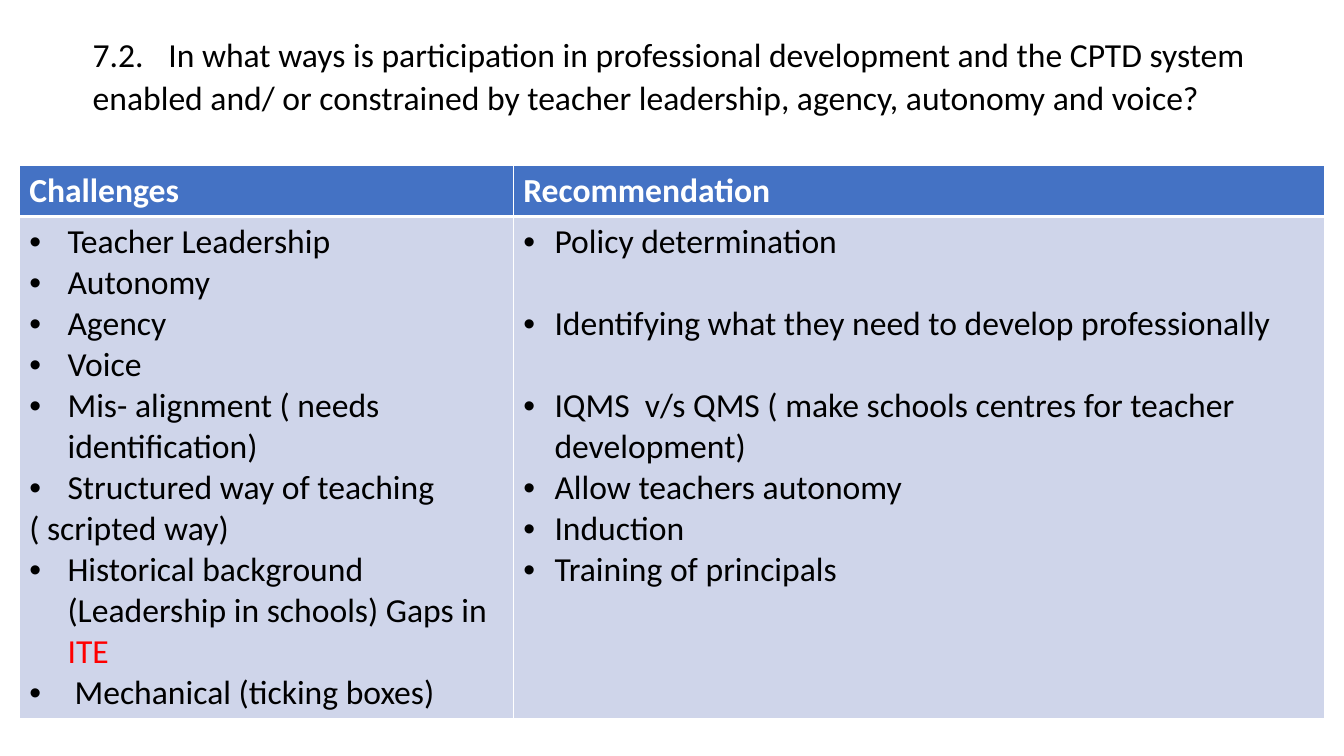
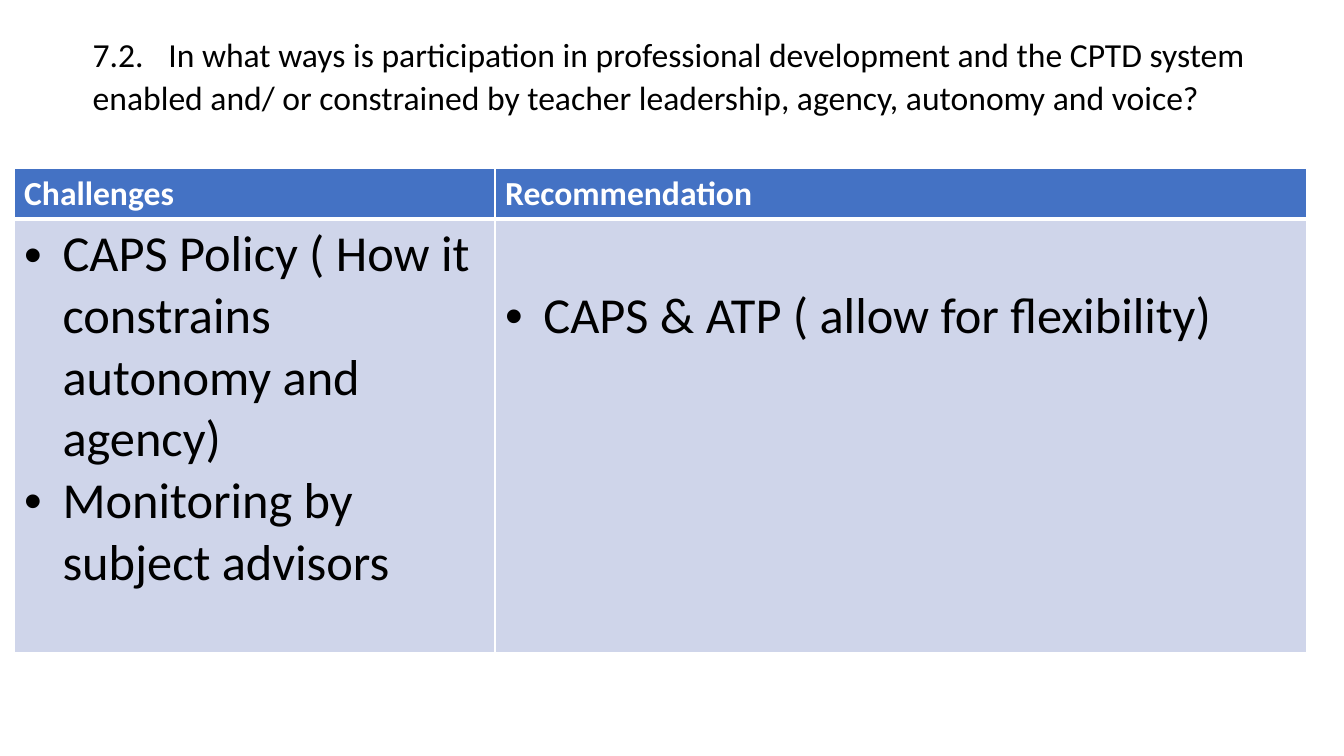
"""Builds two slides of challenges and recommendations on teacher participation."""
import collections

import pptx
import pptx.dml.color
import pptx.oxml.ns
import pptx.util
from lxml import etree

Inches = pptx.util.Inches
Pt = pptx.util.Pt
RGBColor = pptx.dml.color.RGBColor

BLACK = RGBColor(0x00, 0x00, 0x00)
WHITE = RGBColor(0xFF, 0xFF, 0xFF)
RED = RGBColor(0xFF, 0x00, 0x00)
HEADER_BLUE = RGBColor(0x44, 0x72, 0xC4)
BODY_BLUE = RGBColor(0xCF, 0xD5, 0xEA)
FONT = "Calibri"
LINE_HEIGHT = 1.22
HEADER_HEIGHT = 0.5
HEADINGS = ("Challenges", "Recommendation")
QUESTION = (
    "7.2.\tIn what ways is participation in professional development and the CPTD system "
    "enabled and/ or constrained by teacher leadership, agency, autonomy and voice?"
)

Point = collections.namedtuple("Point", "text indent lines_above alert", defaults=(0.38, 0, ""))
Page = collections.namedtuple("Page", "left top widths body_height size body_tops columns")

PAGES = [
    Page(0.19, 1.64, (4.9, 8.05), 4.9, 24, (0.05, 0.05), (
        [
            Point("Teacher Leadership"),
            Point("Autonomy"),
            Point("Agency"),
            Point("Voice"),
            Point("Mis- alignment ( needs identification)"),
            Point("Structured way of teaching"),
            Point("( scripted way)", 0),
            Point("Historical background (Leadership in schools) Gaps in ", alert="ITE"),
            Point("Mechanical (ticking boxes)", 0.45),
        ],
        [
            Point("Policy determination", 0.31),
            Point("Identifying what they need to develop professionally", 0.31, 1),
            Point("IQMS  v/s QMS ( make schools centres for teacher development)", 0.31, 1),
            Point("Allow teachers autonomy", 0.31),
            Point("Induction", 0.31),
            Point("Training of principals", 0.31),
        ],
    )),
    Page(0.14, 1.67, (4.77, 8.05), 4.3, 36, (0.05, 0.66), (
        [
            Point("CAPS Policy ( How it constrains autonomy and agency)"),
            Point("Monitoring by subject advisors"),
        ],
        [Point("CAPS & ATP ( allow for flexibility)")],
    )),
]


def add_element(parent, tag, **attributes):
    return etree.SubElement(parent, pptx.oxml.ns.qn(tag), attributes)


def style_cell(cell, fill, top, bottom):
    properties = cell._tc.get_or_add_tcPr()
    for side, width in (("L", 1), ("R", 1), ("T", top), ("B", bottom)):
        border = add_element(properties, f"a:ln{side}", w=str(Pt(width)))
        add_element(add_element(border, "a:solidFill"), "a:srgbClr", val=str(WHITE))
    cell.fill.solid()
    cell.fill.fore_color.rgb = fill


presentation = pptx.Presentation()
presentation.slide_width = Inches(13.33)
presentation.slide_height = Inches(7.5)

for page in PAGES:
    slide = presentation.slides.add_slide(presentation.slide_layouts[6])

    table = slide.shapes.add_table(
        2, 2, Inches(page.left), Inches(page.top),
        Inches(sum(page.widths)), Inches(HEADER_HEIGHT + page.body_height),
    ).table
    table.rows[0].height = Inches(HEADER_HEIGHT)
    table.rows[1].height = Inches(page.body_height)

    for column, points in enumerate(page.columns):
        table.columns[column].width = Inches(page.widths[column])

        header = table.cell(0, column)
        style_cell(header, HEADER_BLUE, 1, 3)
        heading = header.text_frame.paragraphs[0]
        heading.text = HEADINGS[column]
        heading.font.name = FONT
        heading.font.size = Pt(24)
        heading.font.bold = True
        heading.font.color.rgb = WHITE

        body = table.cell(1, column)
        style_cell(body, BODY_BLUE, 3, 1)
        body.margin_top = Inches(page.body_tops[column])
        for number, point in enumerate(points):
            frame = body.text_frame
            line = frame.add_paragraph() if number else frame.paragraphs[0]
            line.text = point.text
            if point.lines_above:
                line.space_before = Pt(round(point.lines_above * page.size * LINE_HEIGHT, 1))
            if point.indent:
                layout = line._p.get_or_add_pPr()
                layout.set("marL", str(Inches(point.indent)))
                layout.set("indent", str(-Inches(point.indent)))
                add_element(layout, "a:buFont", typeface="Arial")
                add_element(layout, "a:buChar", char="•")
            line.font.name = FONT
            line.font.size = Pt(page.size)
            line.font.bold = False
            line.font.color.rgb = BLACK
            if point.alert:
                alert = line.add_run()
                alert.text = point.alert
                alert.font.color.rgb = RED

    title = slide.shapes.add_textbox(
        Inches(0.32), Inches(0.26), Inches(12.46), Inches(0.95)
    ).text_frame
    title.word_wrap = True
    title.margin_left = Inches(0.6)
    question = title.paragraphs[0]
    question.text = QUESTION
    question.line_spacing = 1.07
    question.space_after = Pt(7.5)
    tabs = add_element(question._p.get_or_add_pPr(), "a:tabLst")
    add_element(tabs, "a:tab", pos=str(Inches(0.75)), algn="l")
    question.font.name = FONT
    question.font.size = Pt(24)
    question.font.color.rgb = BLACK

presentation.save("out.pptx")
